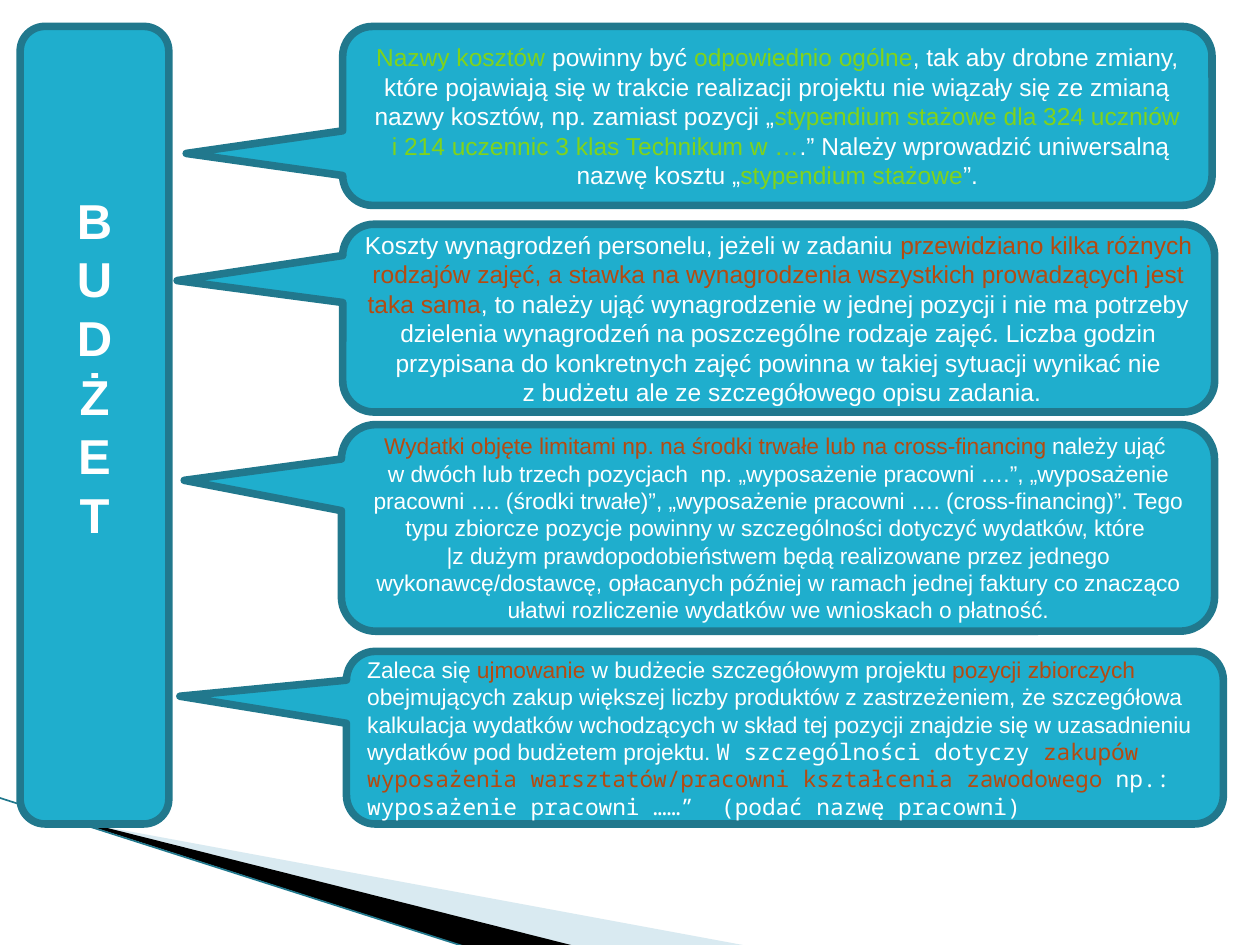
from lxml.etree import SubElement
from pptx import Presentation
from pptx.dml.color import RGBColor
from pptx.enum.shapes import MSO_CONNECTOR, MSO_SHAPE
from pptx.enum.text import MSO_ANCHOR, PP_ALIGN
from pptx.oxml.ns import qn
from pptx.util import Inches, Pt

COLORS = {
    "panel": "1FAECD",
    "edge": "21788D",
    "white": "FFFFFF",
    "green": "81D31A",
    "rust": "B54A10",
    "pale": "A0CBDC",
    "black": "000000",
}
COLUMNS, ROWS = 100, 75
CELL = Inches(10) // COLUMNS
SANS, MONO = "Arial", "Noto Sans Mono"

# Each callout: box (column, row, columns, rows), pointer, size, alignment,
# and paragraphs made of (text, colour[, font]) runs.
CALLOUTS = [
    ((27.2, 2.1, 69, 14.2), (-0.68, 0.21), 14, PP_ALIGN.CENTER, [[
        ("Nazwy kosztów ", "green"),
        ("powinny być ", "white"),
        ("odpowiednio ogólne", "green"),
        (", tak aby drobne zmiany, które pojawiają się w trakcie realizacji "
         "projektu nie wiązały się ze zmianą nazwy kosztów, np. zamiast "
         "pozycji „", "white"),
        ("stypendium stażowe dla 324 uczniów\n"
         " i 214 uczennic 3 klas Technikum w …", "green"),
        (".” Należy wprowadzić uniwersalną nazwę kosztu „", "white"),
        ("stypendium stażowe", "green"),
        ("”.", "white"),
    ]]),
    ((27.2, 17.8, 69.2, 14.9), (-0.69, -0.2), 14, PP_ALIGN.CENTER, [[
        ("Koszty wynagrodzeń personelu, jeżeli w zadaniu ", "white"),
        ("przewidziano kilka różnych rodzajów zajęć, a stawka na "
         "wynagrodzenia wszystkich prowadzących jest taka sama", "rust"),
        (", to należy ująć wynagrodzenie w jednej pozycji i nie ma potrzeby "
         "dzielenia wynagrodzeń na poszczególne rodzaje zajęć. Liczba godzin "
         "przypisana do konkretnych zajęć powinna w takiej sytuacji wynikać "
         "nie\n z budżetu ale ze szczegółowego opisu zadania.", "white"),
    ]]),
    ((27.1, 33.7, 69.3, 16.4), (-0.68, -0.23), 13, PP_ALIGN.CENTER, [
        [
            ("Wydatki objęte limitami np. na środki trwałe lub na "
             "cross-financing ", "rust"),
            ("należy ująć ", "white"),
        ],
        [
            ("w dwóch lub trzech pozycjach  np. „wyposażenie pracowni ….”, "
             "„wyposażenie pracowni …. (środki trwałe)”, „wyposażenie "
             "pracowni …. (cross-financing)”. Tego typu zbiorcze pozycje "
             "powinny w szczególności dotyczyć wydatków, które \n"
             "|z dużym prawdopodobieństwem będą realizowane przez jednego "
             "wykonawcę/dostawcę, opłacanych później w ramach jednej faktury "
             "co znacząco ułatwi rozliczenie wydatków we wnioskach o "
             "płatność.", "white"),
        ],
    ]),
    ((27.5, 51.7, 69.6, 13.7), (-0.69, -0.24), 13, PP_ALIGN.LEFT, [[
        ("Zaleca się ", "white"),
        ("ujmowanie", "rust"),
        (" w budżecie szczegółowym projektu ", "white"),
        ("pozycji zbiorczych ", "rust"),
        ("obejmujących zakup większej liczby produktów z zastrzeżeniem, że "
         "szczegółowa kalkulacja wydatków wchodzących w skład tej pozycji "
         "znajdzie się w uzasadnieniu wydatków pod budżetem projektu. ",
         "white"),
        ("W szczególności dotyczy ", "white", MONO),
        ("zakupów wyposażenia warsztatów/pracowni kształcenia zawodowego ",
         "rust", MONO),
        ("np.: wyposażenie pracowni ……”  (podać nazwę pracowni)",
         "white", MONO),
    ]]),
]


def grid(*cells):
    return [round(cell * CELL) for cell in cells]


def color(name):
    return RGBColor.from_string(COLORS[name])


def add_run(paragraph, text, color_name, size, font=SANS, bold=False):
    """Add text in one style; a newline becomes a line break."""
    for index, part in enumerate(text.split("\n")):
        if index:
            paragraph.add_line_break()
        run = paragraph.add_run()
        run.text = part
        run.font.name = font
        run.font.size = Pt(size)
        run.font.bold = bold
        run.font.color.rgb = color(color_name)


def add_panel(slide, kind, box, paragraphs, size, alignment, bold=False):
    shape = slide.shapes.add_shape(kind, *grid(*box))
    shape.shadow.inherit = False
    shape.fill.solid()
    shape.fill.fore_color.rgb = color("panel")
    shape.line.color.rgb = color("edge")
    shape.line.width = Pt(4.33)
    frame = shape.text_frame
    frame.word_wrap = True
    frame.vertical_anchor = MSO_ANCHOR.MIDDLE
    for index, runs in enumerate(paragraphs):
        paragraph = frame.add_paragraph() if index else frame.paragraphs[0]
        paragraph.alignment = alignment
        for text, color_name, *font in runs:
            add_run(paragraph, text, color_name, size, *font, bold=bold)
    return shape


def add_callout(slide, box, pointer, size, alignment, paragraphs):
    shape = add_panel(slide, MSO_SHAPE.ROUNDED_RECTANGULAR_CALLOUT, box,
                      paragraphs, size, alignment)
    shape.adjustments[0], shape.adjustments[1] = pointer


def add_title_bar(slide, word):
    letters = [[(letter, "white")] for letter in word]
    bar = add_panel(slide, MSO_SHAPE.ROUNDED_RECTANGLE, (1.6, 2.1, 11.8, 63.3),
                    letters, 28, PP_ALIGN.CENTER, bold=True)
    bar.text_frame.margin_bottom = Inches(0.98)


def add_wedge(slide, points, color_name, opacity=None):
    start, *others = [grid(*point) for point in points]
    builder = slide.shapes.build_freeform(*start)
    builder.add_line_segments(others, close=True)
    wedge = builder.convert_to_shape()
    wedge.shadow.inherit = False
    wedge.fill.solid()
    wedge.fill.fore_color.rgb = color(color_name)
    wedge.line.fill.background()
    if opacity is not None:
        fill_color = wedge.fill._xPr.find(qn("a:solidFill"))[0]
        SubElement(fill_color, qn("a:alpha"), val=str(opacity * 1000))


def add_line(slide, start, end):
    line = slide.shapes.add_connector(MSO_CONNECTOR.STRAIGHT,
                                      *grid(*start, *end))
    line.line.color.rgb = color("edge")
    line.line.width = Pt(0.95)
    SubElement(line._element.spPr, qn("a:effectLst"))


def add_corner_decoration(slide):
    add_wedge(slide, [(5.5, 65.1), (59.5, 75.1), (45.6, 75.1), (5.5, 65)],
              "pale", opacity=40)
    add_wedge(slide, [(5.3, 64.9), (45.7, 75.1), (37.2, 75.2), (5.4, 65)],
              "black")
    add_line(slide, (-0.1, 63.3), (37.1, 75.2))


def main():
    presentation = Presentation()
    presentation.slide_width = COLUMNS * CELL
    presentation.slide_height = ROWS * CELL
    slide = presentation.slides.add_slide(presentation.slide_layouts[6])
    add_corner_decoration(slide)
    add_title_bar(slide, "BUDŻET")
    for callout in CALLOUTS:
        add_callout(slide, *callout)
    presentation.save("out.pptx")


if __name__ == "__main__":
    main()
